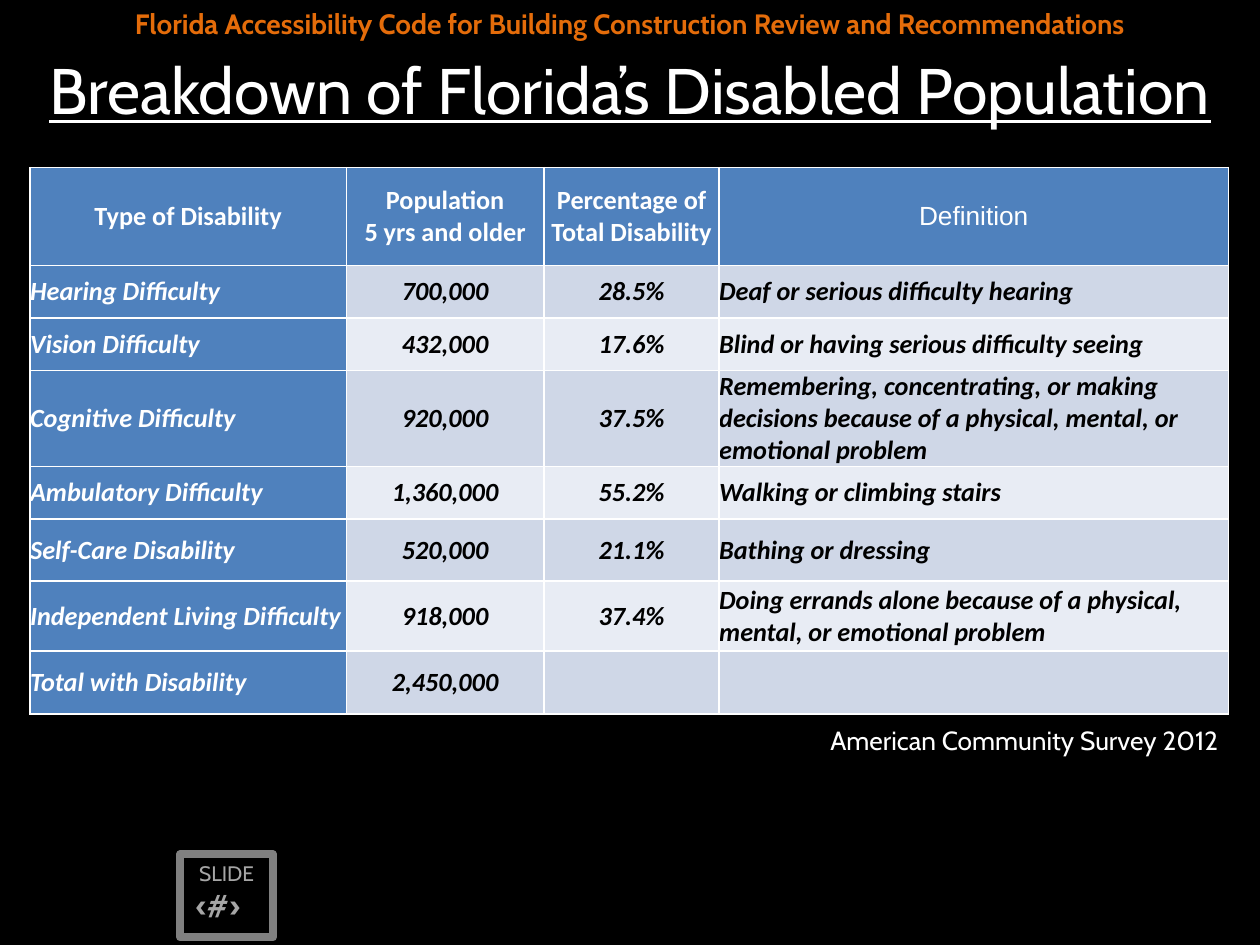
import pptx
import pptx.util
import pptx.dml.color
import pptx.enum.shapes
import pptx.enum.text

Pt = pptx.util.Pt
RGB = pptx.dml.color.RGBColor
ALIGN = pptx.enum.text.PP_ALIGN
ANCHOR = pptx.enum.text.MSO_ANCHOR

BLACK = RGB(0x00, 0x00, 0x00)
WHITE = RGB(0xFF, 0xFF, 0xFF)
ORANGE = RGB(0xE4, 0x6C, 0x0A)
GREY = RGB(0x80, 0x80, 0x80)
SILVER = RGB(0xA6, 0xA6, 0xA6)
BLUE = RGB(0x4F, 0x81, 0xBD)
BANDS = (RGB(0xE8, 0xEC, 0xF4), RGB(0xCF, 0xD7, 0xE7))

COLS = (180.7, 113, 100.1, 290.9)
ROWS = (56, 30, 30, 54.9, 30, 35.5, 40, 36)
DATA = (
    ("Type of Disability", "Population\n5 yrs and older",
     "Percentage of Total Disability", "Definition"),
    ("Hearing Difficulty", "700,000", "28.5%",
     "Deaf or serious difficulty hearing"),
    ("Vision Difficulty", "432,000", "17.6%",
     "Blind or having serious difficulty seeing"),
    ("Cognitive Difficulty", "920,000", "37.5%",
     "Remembering, concentrating, or making decisions because of a "
     "physical, mental, or emotional problem"),
    ("Ambulatory Difficulty", "1,360,000", "55.2%",
     "Walking or climbing stairs"),
    ("Self-Care Disability", "520,000", "21.1%", "Bathing or dressing"),
    ("Independent Living Difficulty", "918,000", "37.4%",
     "Doing errands alone because of a physical, mental, or emotional "
     "problem"),
    ("Total with Disability", "2,450,000", "", ""),
)


def style(frame, size, color, font="Cabin", bold=False, italic=False,
          align=ALIGN.CENTER):
    for para in frame.paragraphs:
        para.alignment = align
        for run in para.runs:
            run.font.name = font
            run.font.size = Pt(size)
            run.font.bold = bold
            run.font.italic = italic
            run.font.color.rgb = color


def inset(item, gap):
    """Set equal margins on a text frame or a table cell."""
    item.margin_left = item.margin_right = Pt(gap)
    item.margin_top = item.margin_bottom = Pt(gap)


def add_text(slide, box, text, size, color, bold=False, gap=3.6,
             anchor=ANCHOR.TOP):
    shape = slide.shapes.add_textbox(*map(Pt, box))
    frame = shape.text_frame
    frame.word_wrap = True
    frame.vertical_anchor = anchor
    inset(frame, gap)
    frame.text = text
    style(frame, size, color, bold=bold)


def add_badge(slide):
    rect = pptx.enum.shapes.MSO_SHAPE.RECTANGLE
    badge = slide.shapes.add_shape(rect, Pt(103), Pt(488.2), Pt(53), Pt(47.5))
    badge.shadow.inherit = False
    badge.fill.solid()
    badge.fill.fore_color.rgb = BLACK
    badge.line.color.rgb = GREY
    badge.line.width = Pt(4.5)
    add_text(slide, (103, 488.2, 53, 21), "SLIDE", 12, SILVER)
    add_text(slide, (100, 502.6, 49, 30), "‹#›", 18, SILVER, bold=True)


def set_title(slide, text):
    title = slide.shapes.title
    title.left, title.top = Pt(0), Pt(24)
    title.width, title.height = Pt(720), Pt(54)
    frame = title.text_frame
    frame.vertical_anchor = ANCHOR.MIDDLE
    inset(frame, 0)
    frame.text = text
    style(frame, 36.8, WHITE)
    frame.paragraphs[0].runs[0].font.underline = True


def fill_cell(cell, row, col, text):
    head = row == 0
    side = col == 0
    cell.fill.solid()
    cell.fill.fore_color.rgb = BLUE if head or side else BANDS[row % 2]
    cell.vertical_anchor = ANCHOR.MIDDLE
    inset(cell, 0)
    cell.text_frame.text = text
    plain = head and col == 3
    style(cell.text_frame, 15, WHITE if head or side else BLACK,
          font="Arial" if plain else "Calibri", bold=not plain,
          italic=not head,
          align=ALIGN.CENTER if head or col in (1, 2) else ALIGN.LEFT)


def add_grid(slide):
    frame = slide.shapes.add_table(len(ROWS), len(COLS), Pt(17.2), Pt(95.8),
                                   Pt(sum(COLS)), Pt(sum(ROWS)))
    table = frame.table
    table.first_col = True
    for col, width in zip(table.columns, COLS):
        col.width = Pt(width)
    for row, height in zip(table.rows, ROWS):
        row.height = Pt(height)
    for r, line in enumerate(DATA):
        for c, text in enumerate(line):
            fill_cell(table.cell(r, c), r, c, text)


def main():
    deck = pptx.Presentation()
    deck.slide_width, deck.slide_height = Pt(720), Pt(540)
    slide = deck.slides.add_slide(deck.slide_layouts[5])
    slide.background.fill.solid()
    slide.background.fill.fore_color.rgb = BLACK
    add_badge(slide)
    add_text(slide, (0, 0, 720, 26),
             "Florida Accessibility Code for Building Construction "
             "Review and Recommendations", 16, ORANGE, bold=True)
    set_title(slide, "Breakdown of Florida’s Disabled Population")
    add_grid(slide)
    add_text(slide, (457.2, 410.4, 256.3, 25.2),
             "American Community Survey 2012", 15, WHITE, gap=0,
             anchor=ANCHOR.MIDDLE)
    deck.save("out.pptx")


if __name__ == "__main__":
    main()
